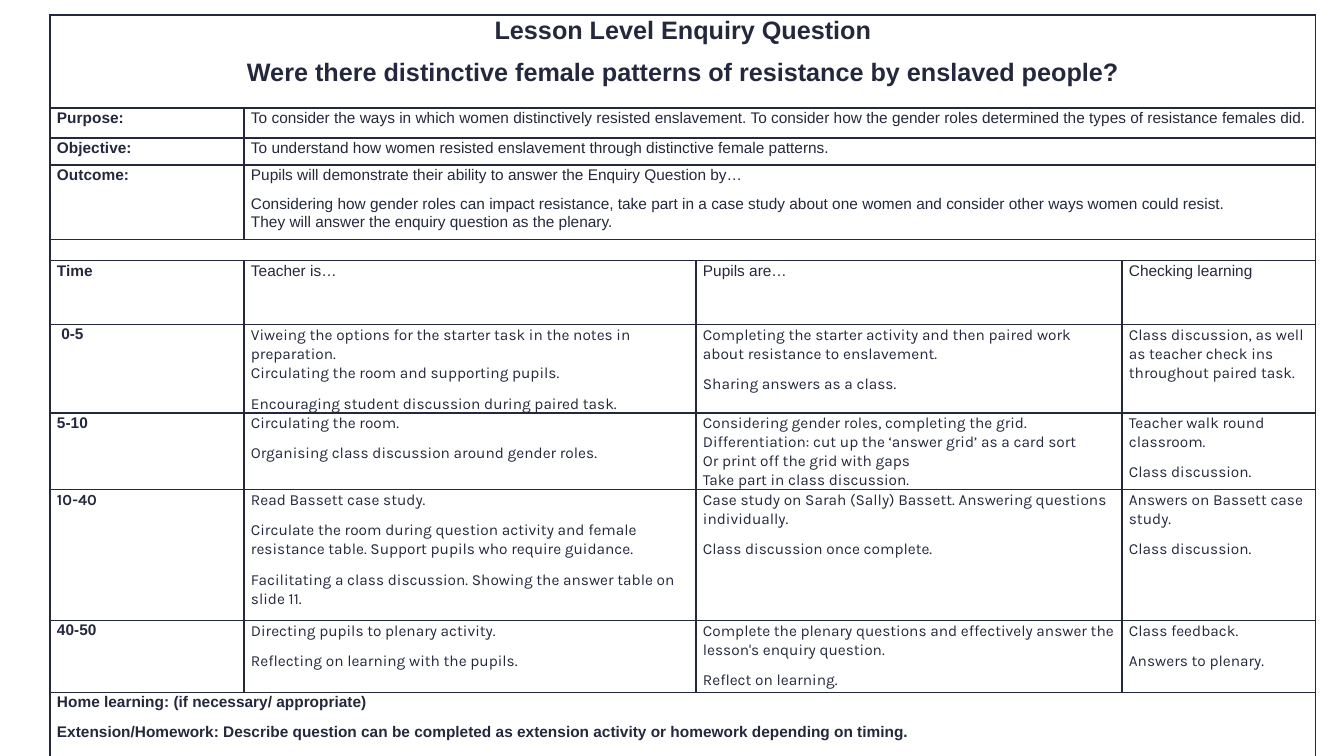
"""Build the lesson plan slide on patterns of female resistance."""
import copy
import dataclasses

import lxml.etree
import pptx
import pptx.dml.color
import pptx.enum.text
import pptx.oxml.ns
import pptx.table
import pptx.util

SCALE = 914400 / 100.8


@dataclasses.dataclass(frozen=True)
class Theme:
    """Colours, fonts and type sizes."""
    ink: str = "24283C"
    plain: str = "Arial"
    round: str = "Karla"
    head: int = 18
    body: int = 11


@dataclasses.dataclass(frozen=True)
class Entry:
    """Text of one cell and its look."""
    paras: tuple[str, ...]
    font: str
    bold: bool = False
    size: int = 11
    centre: bool = False


@dataclasses.dataclass(frozen=True)
class Row:
    """Height of a table row and its cells, the last spanning what is left."""
    high: int
    cells: tuple[Entry, ...]


THEME = Theme()
COLS = (194, 452, 426, 194)


def px(count: float) -> int:
    """Turn pixels into EMU."""
    return round(count * SCALE)


def label(*paras: str, font: str = THEME.plain) -> Entry:
    """Describe a bold cell."""
    return Entry(paras, font, True, THEME.body)


def plain(*paras: str) -> Entry:
    """Describe a regular cell in the plain font."""
    return Entry(paras, THEME.plain, size=THEME.body)


def note(*paras: str) -> Entry:
    """Describe a regular cell in the rounded font."""
    return Entry(paras, THEME.round, size=THEME.body)


ROWS = (
    Row(93, (Entry((
        "Lesson Level Enquiry Question",
        "Were there distinctive female patterns of resistance by enslaved people?",
    ), THEME.plain, True, THEME.head, True),)),
    Row(30, (label("Purpose:"), plain(
        "To consider the ways in which women distinctively resisted enslavement. "
        "To consider how the gender roles determined the types of resistance females did."))),
    Row(27, (label("Objective:"), plain(
        "To understand how women resisted enslavement through distinctive female patterns."))),
    Row(75, (label("Outcome:"), plain(
        "Pupils will demonstrate their ability to answer the Enquiry Question by…",
        "Considering how gender roles can impact resistance, take part in a case study "
        "about one women and consider other ways women could resist. \n"
        "They will answer the enquiry question as the plenary."))),
    Row(21, (plain(),)),
    Row(64, (label("Time"), plain("Teacher is…"), plain("Pupils are…"),
             plain("Checking learning"))),
    Row(72, (
        label(" 0-5"),
        note("Viweing the options for the starter task in the notes in preparation.\n"
             "Circulating the room and supporting pupils.",
             "Encouraging student discussion during paired task."),
        note("Completing the starter activity and then paired work about resistance "
             "to enslavement.", "Sharing answers as a class."),
        note("Class discussion, as well as teacher check ins throughout paired task."))),
    Row(72, (
        label("5-10"),
        note("Circulating the room.", "Organising class discussion around gender roles."),
        note("Considering gender roles, completing the grid.\n"
             "Differentiation: cut up the ‘answer grid’ as a card sort\n"
             "Or print off the grid with gaps\nTake part in class discussion."),
        note("Teacher walk round classroom.", "Class discussion."))),
    Row(131, (
        label("10-40", font=THEME.round),
        note("Read Bassett case study.",
             "Circulate the room during question activity and female resistance table. "
             "Support pupils who require guidance.",
             "Facilitating a class discussion. Showing the answer table on slide 11."),
        note("Case study on Sarah (Sally) Bassett. Answering questions individually.",
             "Class discussion once complete."),
        note("Answers on Bassett case study.", "Class discussion."))),
    Row(72, (
        label("40-50"),
        note("Directing pupils to plenary activity.",
             "Reflecting on learning with the pupils."),
        note("Complete the plenary questions and effectively answer the lesson's "
             "enquiry question.", "Reflect on learning."),
        note("Class feedback.", "Answers to plenary."))),
    Row(64, (label(
        "Home learning: (if necessary/ appropriate)",
        "Extension/Homework: Describe question can be completed as extension activity "
        "or homework depending on timing."),)),
)


def frame(cell: pptx.table._Cell) -> None:
    """Give a cell its borders, margins and clear fill."""
    props = cell._tc.get_or_add_tcPr()
    qn = pptx.oxml.ns.qn
    for side in "LRTB":
        line = lxml.etree.SubElement(props, qn(f"a:ln{side}"), w="12700")
        fill = lxml.etree.SubElement(line, qn("a:solidFill"))
        lxml.etree.SubElement(fill, qn("a:srgbClr"), val=THEME.ink)
    cell.fill.background()
    cell.margin_left = cell.margin_right = px(7)
    cell.margin_top = cell.margin_bottom = 0


def write(cell: pptx.table._Cell, entry: Entry) -> None:
    """Write and format the text of a cell."""
    qn = pptx.oxml.ns.qn
    body = cell.text_frame
    if not entry.paras:
        lxml.etree.SubElement(body.paragraphs[0]._p, qn("a:endParaRPr"),
                              sz=str(entry.size * 100))
    for place, text in enumerate(entry.paras):
        para = body.add_paragraph() if place else body.paragraphs[0]
        para.text = text
        para.line_spacing = 1.07
        para.space_after = pptx.util.Pt(8)
        if entry.centre:
            para.alignment = pptx.enum.text.PP_ALIGN.CENTER
        for run in para.runs:
            run.font.name = entry.font
            run.font.size = pptx.util.Pt(entry.size)
            run.font.bold = entry.bold
            run.font.color.rgb = pptx.dml.color.RGBColor.from_string(THEME.ink)
        for gap in para._p.findall(qn("a:br")):
            gap.append(copy.deepcopy(para.runs[0]._r.rPr))


def main() -> None:
    """Draw the lesson table and save the deck."""
    deck = pptx.Presentation()
    deck.slide_width, deck.slide_height = px(1344), px(756)
    slide = deck.slides.add_slide(deck.slide_layouts[6])
    high = sum(row.high for row in ROWS)
    table = slide.shapes.add_table(len(ROWS), len(COLS), px(50), px(15),
                                   px(sum(COLS)), px(high)).table
    table.first_row = table.horz_banding = False
    for col, wide in zip(table.columns, COLS):
        col.width = px(wide)
    for level, row in enumerate(ROWS):
        table.rows[level].height = px(row.high)
        for cell in table.rows[level].cells:
            frame(cell)
        last = len(row.cells) - 1
        if last < len(COLS) - 1:
            table.cell(level, last).merge(table.cell(level, len(COLS) - 1))
        for place, entry in enumerate(row.cells):
            write(table.cell(level, place), entry)
    deck.save("out.pptx")


if __name__ == "__main__":
    main()
